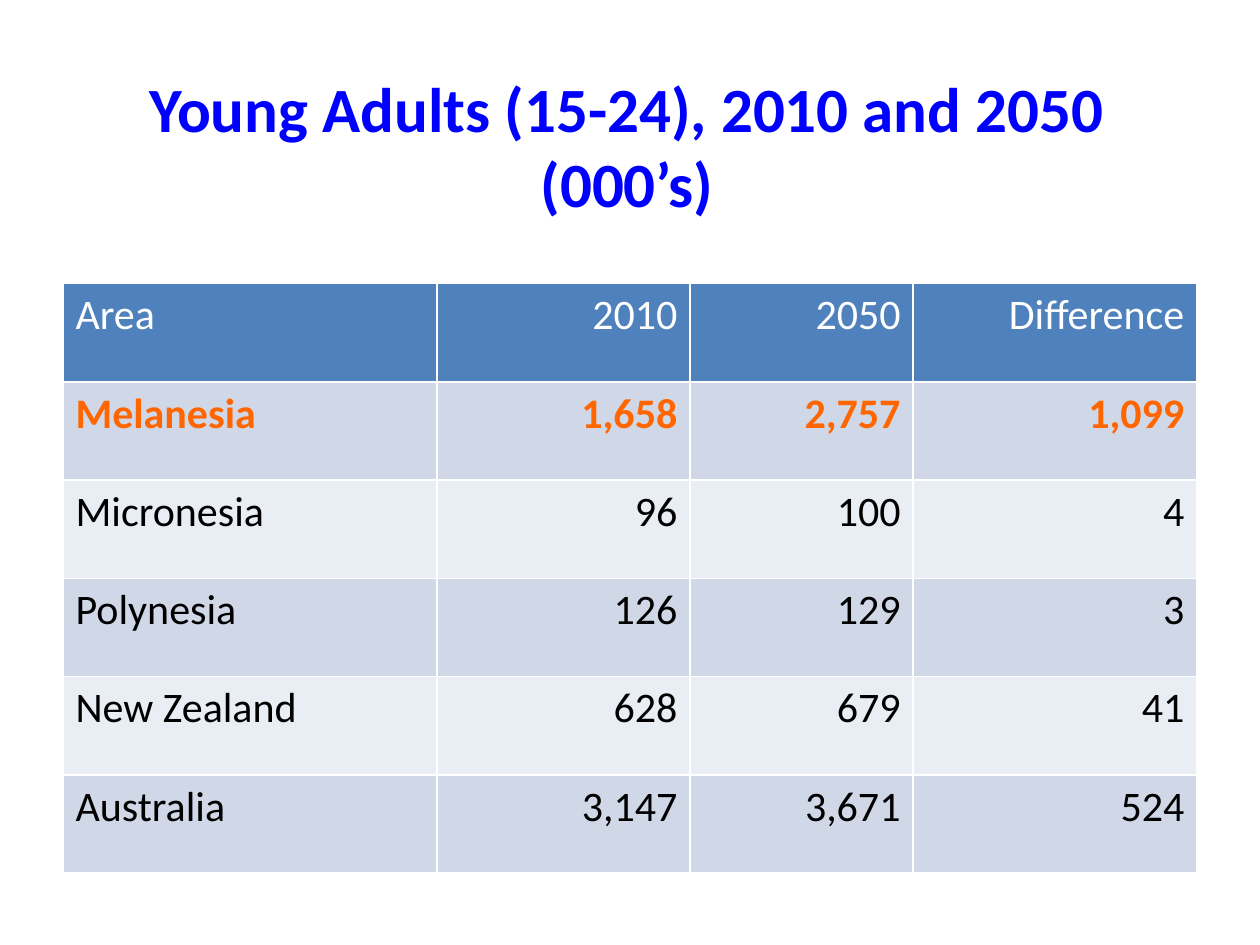
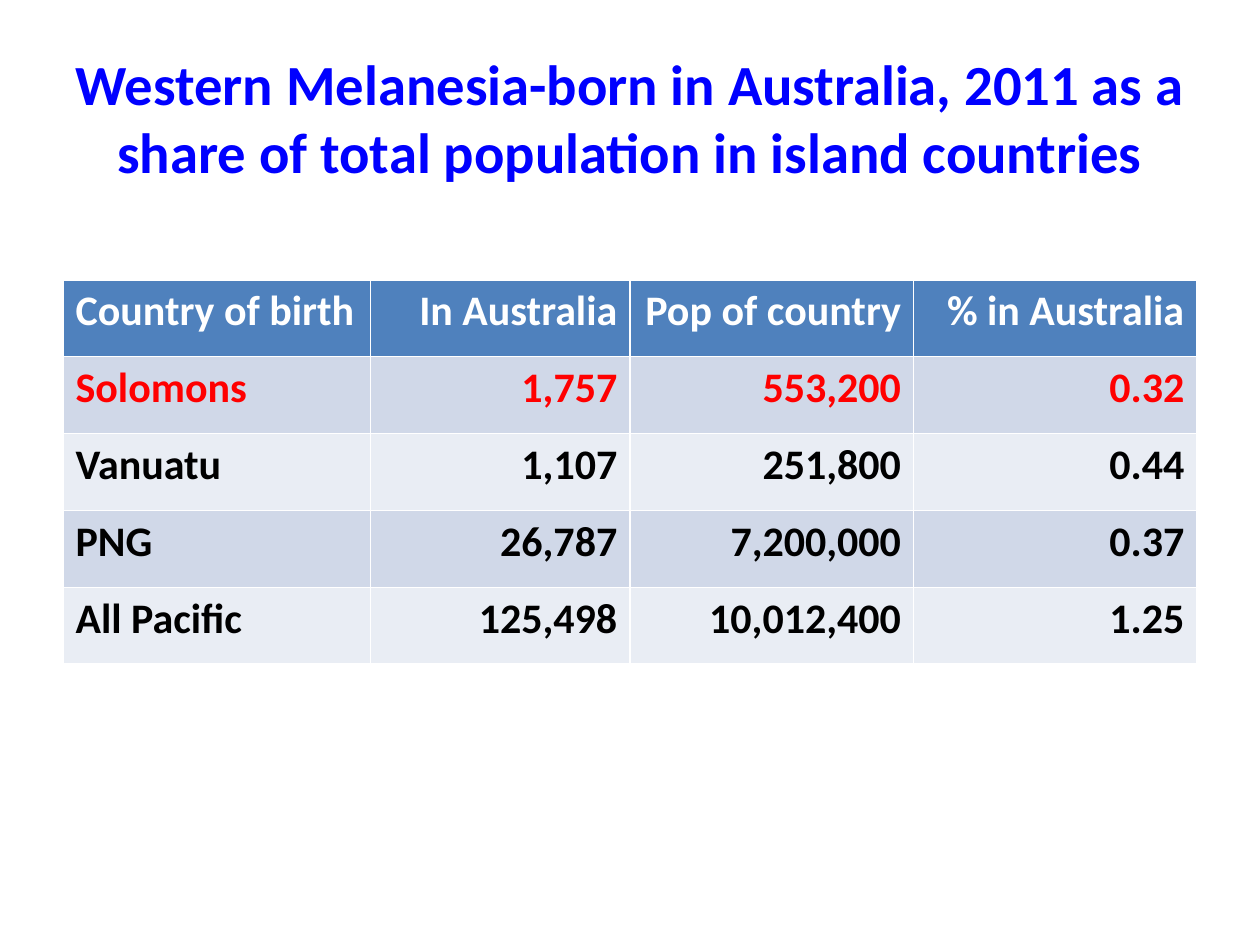
from pptx import Presentation
from pptx.dml.color import RGBColor as RGB
from pptx.enum.text import MSO_ANCHOR as ANCHOR, PP_ALIGN as ALIGN
from pptx.util import Cm, Pt

COLORS = {
    "title": "0000FF",
    "header": "4F81BD",
    "header_text": "FFFFFF",
    "band_dark": "D0D8E8",
    "band_light": "E9EDF4",
    "text": "000000",
    "orange": "FF6600",
    "red": "FF0000",
}
FONT = "Calibri"
TABLE_LEFT = 1.27

SLIDES = [
    {
        "title": "Young Adults (15-24), 2010 and 2050 (000’s)",
        "title_box": (2.11, 1.47, 21.06, 2.9),
        "title_size": 36,
        "top": 5.72,
        "row_height": 1.98,
        "widths": (7.54, 5.1, 4.5, 5.72),
        "highlight": "orange",
        "all_bold": False,
        "rows": [
            ("Area", "2010", "2050", "Difference"),
            ("Melanesia", "1,658", "2,757", "1,099"),
            ("Micronesia", "96", "100", "4"),
            ("Polynesia", "126", "129", "3"),
            ("New Zealand", "628", "679", "41"),
            ("Australia", "3,147", "3,671", "524"),
        ],
    },
    {
        "title": "Western Melanesia-born in Australia, 2011 as a share of total population in island countries",
        "title_box": (1.27, 0.76, 22.86, 3.18),
        "title_size": 32.4,
        "top": 5.64,
        "row_height": 1.55,
        "widths": (6.2, 5.23, 5.72, 5.71),
        "highlight": "red",
        "all_bold": True,
        "rows": [
            ("Country of birth", "In Australia", "Pop of country", "% in Australia"),
            ("Solomons", "1,757", "553,200", "0.32"),
            ("Vanuatu", "1,107", "251,800", "0.44"),
            ("PNG", "26,787", "7,200,000", "0.37"),
            ("All Pacific", "125,498", "10,012,400", "1.25"),
        ],
    },
]


def write(tf, text, size, color, bold, align):
    tf.text = text
    p = tf.paragraphs[0]
    p.alignment = align
    font = p.runs[0].font
    font.name = FONT
    font.size = Pt(size)
    font.bold = bold
    font.color.rgb = RGB.from_string(COLORS[color])


prs = Presentation()
prs.slide_width = Cm(25.4)
prs.slide_height = Cm(19.05)

for page in SLIDES:
    s = prs.slides.add_slide(prs.slide_layouts[6])

    tf = s.shapes.add_textbox(*[Cm(v) for v in page["title_box"]]).text_frame
    tf.word_wrap = True
    tf.vertical_anchor = ANCHOR.MIDDLE
    write(tf, page["title"], page["title_size"], "title", True, ALIGN.CENTER)

    rows, widths = page["rows"], page["widths"]
    table = s.shapes.add_table(
        len(rows), len(widths), Cm(TABLE_LEFT), Cm(page["top"]),
        Cm(sum(widths)), Cm(page["row_height"] * len(rows)),
    ).table
    for column, width in zip(table.columns, widths):
        column.width = Cm(width)

    for i, row in enumerate(rows):
        table.rows[i].height = Cm(page["row_height"])
        if i == 0:
            fill, color = "header", "header_text"
        else:
            fill = "band_dark" if i % 2 else "band_light"
            color = page["highlight"] if i == 1 else "text"
        bold = page["all_bold"] or i == 1
        for j, text in enumerate(row):
            cell = table.cell(i, j)
            cell.fill.solid()
            cell.fill.fore_color.rgb = RGB.from_string(COLORS[fill])
            align = ALIGN.RIGHT if j else ALIGN.LEFT
            write(cell.text_frame, text, 24, color, bold, align)

prs.save("out.pptx")
